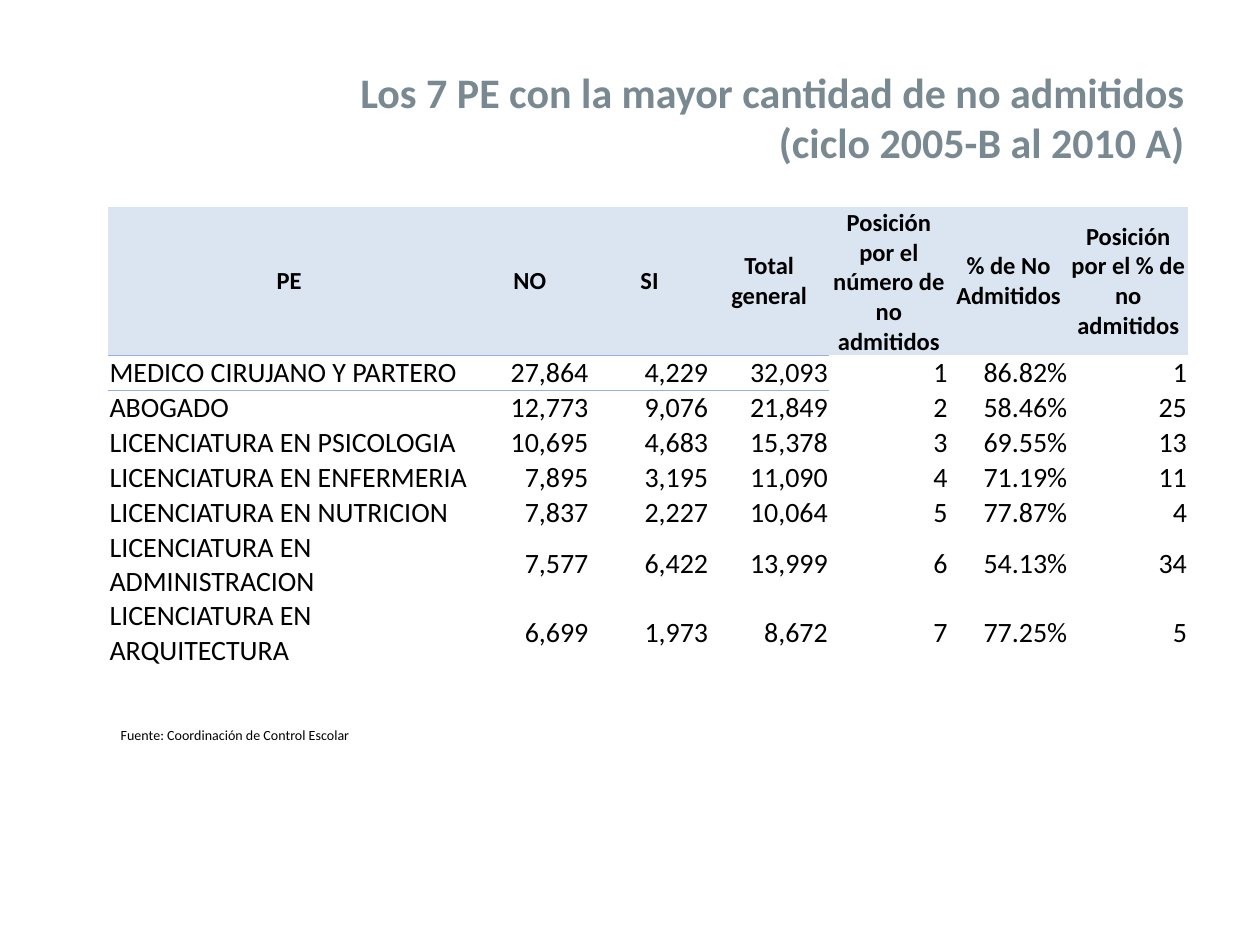
from pptx import Presentation
from pptx.dml.color import RGBColor
from pptx.enum.text import MSO_ANCHOR as ANCHOR, MSO_AUTO_SIZE as AUTO, PP_ALIGN as ALIGN
from pptx.oxml import parse_xml
from pptx.oxml.ns import nsdecls
from pptx.util import Inches, Pt

COLORS = {"title": "798992", "text": "000000", "header": "DBE5F1", "rule": "95B3D7"}
NO_GRID_STYLE = "{2D5ABB26-0587-4C30-8999-92F81FD0307C}"
RULED_COLUMNS = 4
COLUMN_WIDTHS = [2.87] + [0.95] * 6
ROW_HEIGHTS = [1.04] + [0.21] * 7
ROWS = [
    ["PE", "NO", "SI", "Total general", "Posición por el número de no admitidos",
     "% de No Admitidos", "Posición por el % de no admitidos"],
    ["MEDICO CIRUJANO Y PARTERO", "27,864", "4,229", "32,093", "1", "86.82%", "1"],
    ["ABOGADO", "12,773", "9,076", "21,849", "2", "58.46%", "25"],
    ["LICENCIATURA EN PSICOLOGIA", "10,695", "4,683", "15,378", "3", "69.55%", "13"],
    ["LICENCIATURA EN ENFERMERIA", "7,895", "3,195", "11,090", "4", "71.19%", "11"],
    ["LICENCIATURA EN NUTRICION", "7,837", "2,227", "10,064", "5", "77.87%", "4"],
    ["LICENCIATURA EN ADMINISTRACION", "7,577", "6,422", "13,999", "6", "54.13%", "34"],
    ["LICENCIATURA EN ARQUITECTURA", "6,699", "1,973", "8,672", "7", "77.25%", "5"],
]


class SlideBuilder:
    """Holds the style and the current slide, and adds elements to it."""

    def __init__(self, slide, font="Calibri"):
        self.s = slide
        self.font = font

    def style(self, p, size, color="text", bold=False, align=ALIGN.LEFT):
        p.alignment = align
        for r in p.runs:
            r.font.name = self.font
            r.font.size = Pt(size)
            r.font.bold = bold
            r.font.color.rgb = RGBColor.from_string(COLORS[color])

    def text(self, box, text, size, anchor=ANCHOR.TOP, **style):
        sp = self.s.shapes.add_textbox(*map(Inches, box))
        tf = sp.text_frame
        tf.word_wrap = True
        tf.auto_size = AUTO.SHAPE_TO_FIT_TEXT
        tf.vertical_anchor = anchor
        p = tf.paragraphs[0]
        p.text = text
        self.style(p, size, **style)
        return p

    def rule(self, cell, side):
        cell._tc.get_or_add_tcPr().append(parse_xml(
            f'<a:{side} {nsdecls("a")} w="{Pt(0.5)}"><a:solidFill>'
            f'<a:srgbClr val="{COLORS["rule"]}"/></a:solidFill></a:{side}>'))

    def cell(self, cell, text, row, col):
        header = row == 0
        cell.text_frame.text = text
        cell.vertical_anchor = ANCHOR.MIDDLE
        cell.margin_left = cell.margin_right = cell.margin_top = Inches(0.01)
        cell.margin_bottom = 0
        if row < 2 and col < RULED_COLUMNS:
            self.rule(cell, "lnB" if header else "lnT")
        if header:
            cell.fill.solid()
            cell.fill.fore_color.rgb = RGBColor.from_string(COLORS["header"])
        else:
            cell.fill.background()
        align = ALIGN.CENTER if header else ALIGN.RIGHT if col else ALIGN.LEFT
        self.style(cell.text_frame.paragraphs[0], 14 if header else 16, bold=header, align=align)

    def table(self, left, top, rows, widths, heights):
        frame = self.s.shapes.add_table(
            len(rows), len(widths), Inches(left), Inches(top),
            Inches(sum(widths)), Inches(sum(heights)))
        table = frame.table
        table.horz_banding = table.first_row = False
        table._tbl.tblPr[0].text = NO_GRID_STYLE
        for column, width in zip(table.columns, widths):
            column.width = Inches(width)
        for i, (height, values) in enumerate(zip(heights, rows)):
            table.rows[i].height = Inches(height)
            for j, value in enumerate(values):
                self.cell(table.cell(i, j), value, i, j)


def main():
    prs = Presentation()
    prs.slide_width, prs.slide_height = Inches(10), Inches(7.5)
    builder = SlideBuilder(prs.slides.add_slide(prs.slide_layouts[6]))
    builder.text((0.5, 0.47, 9, 0.91),
                 "Los 7 PE con la mayor cantidad de no admitidos\v(ciclo 2005-B al 2010 A)",
                 24, anchor=ANCHOR.MIDDLE, color="title", bold=True, align=ALIGN.RIGHT)
    builder.table(0.86, 1.64, ROWS, COLUMN_WIDTHS, ROW_HEIGHTS)
    source = builder.text((0.86, 5.7, 5, 0.25), "Fuente: Coordinación de Control Escolar", 8)
    source.line_spacing = 1.15
    source.space_after = Pt(10)
    prs.save("out.pptx")


if __name__ == "__main__":
    main()
